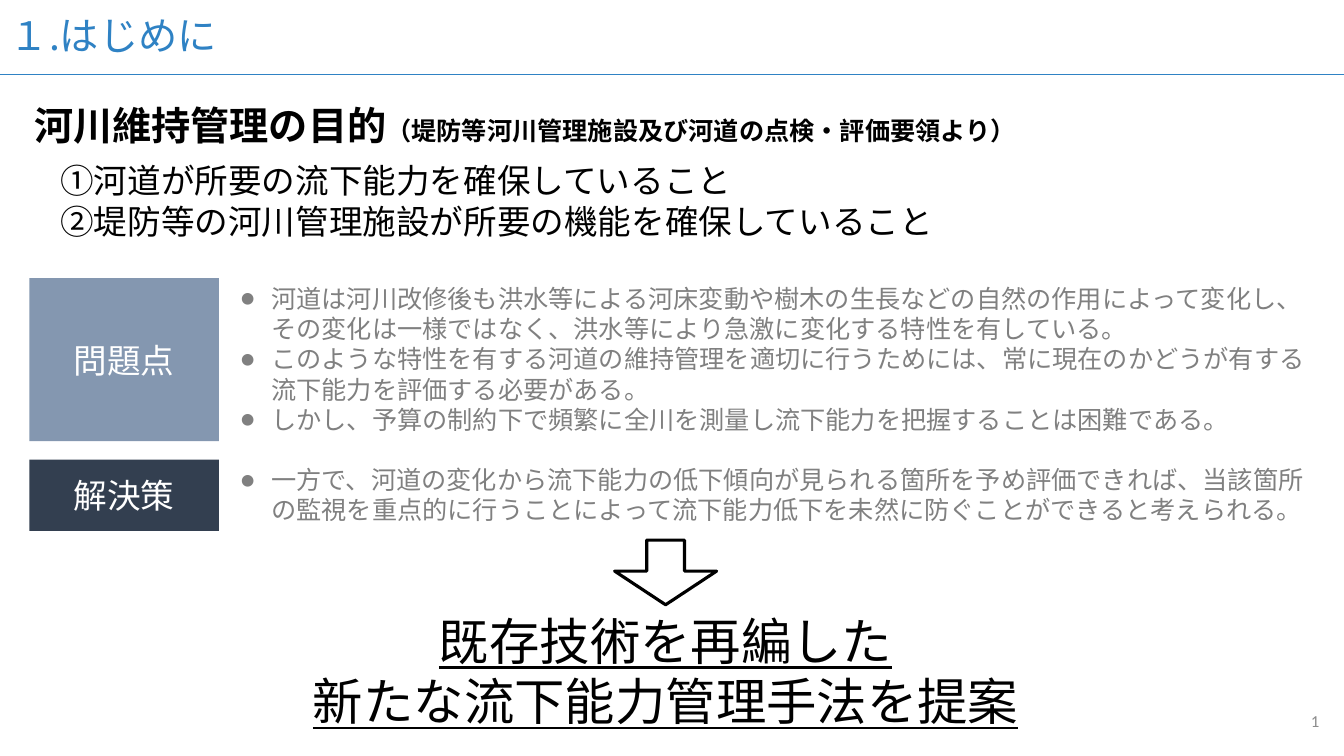
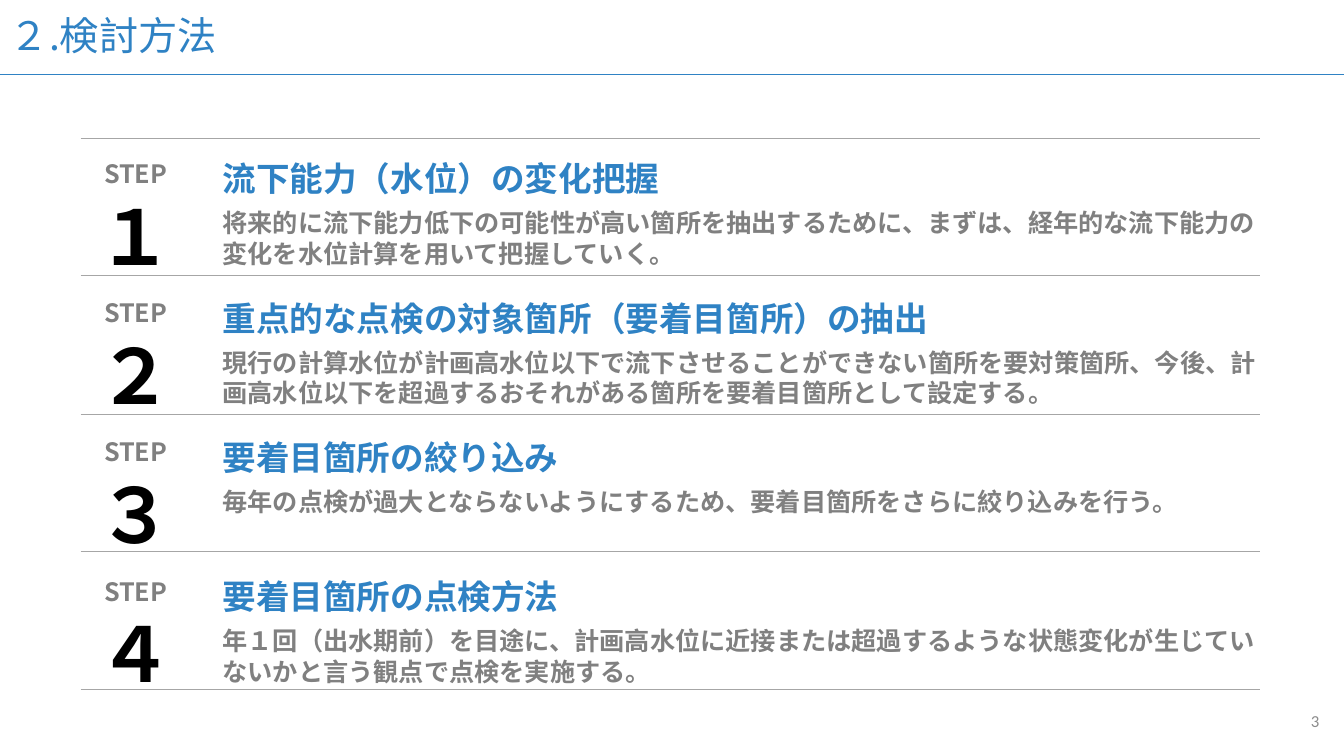
from math import ceil

from lxml.etree import SubElement
from pptx import Presentation
from pptx.dml.color import RGBColor
from pptx.enum.shapes import MSO_CONNECTOR as Connector, MSO_SHAPE as Shape
from pptx.enum.text import MSO_ANCHOR as Anchor, MSO_AUTO_SIZE as AutoSize, PP_ALIGN as Align
from pptx.oxml.ns import qn
from pptx.util import Cm, Pt

COLOURS = {
    "accent": "2F82C4", "text": "000000", "body": "808080", "number": "8C8C8C",
    "rule": "A6A6A6", "problem": "8497B0", "solution": "333F50", "white": "FFFFFF",
}
JAPANESE, LATIN = "Noto Sans CJK JP", "Calibri"
SLIDE_W, SLIDE_H = 33.87, 19.05

# Text styles: font attributes, with the colour given by its key
STYLES = {
    "title": {"size": Pt(28), "colour": "accent"},
    "number": {"size": Pt(12), "colour": "number", "name": LATIN},
    "heading": {"size": Pt(28), "colour": "text", "bold": True},
    "source": {"size": Pt(18), "colour": "text", "bold": True},
    "purpose": {"size": Pt(24), "colour": "text"},
    "body": {"size": Pt(18), "colour": "body"},
    "tag": {"size": Pt(24), "colour": "white"},
    "proposal": {"size": Pt(36), "colour": "text", "underline": True},
    "step": {"size": Pt(18), "colour": "body", "bold": True},
    "digit": {"size": Pt(54), "colour": "text", "bold": True},
    "step title": {"size": Pt(24), "colour": "accent", "bold": True},
}

PURPOSE_HEADING = [
    ("河川維持管理の目的", "heading"),
    ("（堤防等河川管理施設及び河道の点検・評価要領より）", "source"),
]
PURPOSES = [
    "①河道が所要の流下能力を確保していること",
    "②堤防等の河川管理施設が所要の機能を確保していること",
]
PROBLEMS = [
    "河道は河川改修後も洪水等による河床変動や樹木の生長などの自然の作用によって変化し、"
    "その変化は一様ではなく、洪水等により急激に変化する特性を有している。",
    "このような特性を有する河道の維持管理を適切に行うためには、"
    "常に現在のかどうが有する流下能力を評価する必要がある。",
    "しかし、予算の制約下で頻繁に全川を測量し流下能力を把握することは困難である。",
]
SOLUTIONS = [
    "一方で、河道の変化から流下能力の低下傾向が見られる箇所を予め評価できれば、"
    "当該箇所の監視を重点的に行うことによって流下能力低下を未然に防ぐことができると考えられる。",
]
PROPOSAL = ["既存技術を再編した", "新たな流下能力管理手法を提案"]
STEPS = [
    ("１", "流下能力（水位）の変化把握",
     "将来的に流下能力低下の可能性が高い箇所を抽出するために、まずは、"
     "経年的な流下能力の変化を水位計算を用いて把握していく。"),
    ("２", "重点的な点検の対象箇所（要着目箇所）の抽出",
     "現行の計算水位が計画高水位以下で流下させることができない箇所を要対策箇所、今後、"
     "計画高水位以下を超過するおそれがある箇所を要着目箇所として設定する。"),
    ("３", "要着目箇所の絞り込み",
     "毎年の点検が過大とならないようにするため、要着目箇所をさらに絞り込みを行う。"),
    ("４", "要着目箇所の点検方法",
     "年１回（出水期前）を目途に、計画高水位に近接または超過するような"
     "状態変化が生じていないかと言う観点で点検を実施する。"),
]
CHARS_PER_LINE = 41


def rgb(key):
    return RGBColor.from_string(COLOURS[key])


def cm_box(box):
    return [Cm(round(length, 2)) for length in box]


def add_bullet(paragraph):
    props = paragraph._p.get_or_add_pPr()
    props.set("marL", str(Cm(0.79)))
    props.set("indent", str(-Cm(0.79)))
    SubElement(props, qn("a:buFont")).set("typeface", LATIN)
    SubElement(props, qn("a:buChar")).set("char", "●")


def add_run(paragraph, words, style):
    run = paragraph.add_run()
    run.text = words
    for attribute, value in ({"name": JAPANESE} | STYLES[style]).items():
        if attribute == "colour":
            run.font.color.rgb = rgb(value)
        else:
            setattr(run.font, attribute, value)
    SubElement(run._r.get_or_add_rPr(), qn("a:ea")).set("typeface", run.font.name)


def write(frame, paragraphs, style, align=Align.LEFT, bullets=False, **frame_format):
    """Fill a frame; a paragraph is a string or a list of (words, style)."""
    for attribute, value in ({"word_wrap": True} | frame_format).items():
        setattr(frame, attribute, value)
    for index, content in enumerate(paragraphs):
        paragraph = frame.add_paragraph() if index else frame.paragraphs[0]
        paragraph.alignment = align
        if bullets:
            add_bullet(paragraph)
        runs = [(content, style)] if isinstance(content, str) else content
        for words, run_style in runs:
            add_run(paragraph, words, run_style)


def add_text(shapes, box, paragraphs, style, **options):
    frame = shapes.add_textbox(*cm_box(box)).text_frame
    write(frame, paragraphs, style, **({"auto_size": AutoSize.SHAPE_TO_FIT_TEXT} | options))
    return frame


def add_rule(slide, left, top, width, colour):
    start_x, y, length = cm_box((left, top, width))
    rule = slide.shapes.add_connector(Connector.STRAIGHT, start_x, y, start_x + length, y)
    rule.line.color.rgb = rgb(colour)
    rule.line.width = Pt(0.5)
    SubElement(rule._element.spPr, qn("a:effectLst"))


def add_page(deck, title, number):
    """Blank slide with the shared title, title rule and page number."""
    slide = deck.slides.add_slide(deck.slide_layouts[6])
    add_rule(slide, 0, 1.88, SLIDE_W, "accent")
    fixed = {"auto_size": AutoSize.NONE, "vertical_anchor": Anchor.MIDDLE}
    heading = add_text(slide.shapes, (0, -0.02, SLIDE_W, 1.92), [title], "title", **fixed)
    heading.paragraphs[0].line_spacing = 0.9
    add_text(slide.shapes, (25.88, 17.65, 7.62, 1.02), [number], "number",
             align=Align.RIGHT, **fixed)
    return slide


def add_purpose(slide, left, top):
    add_text(slide.shapes, (left, top, 25.98, 1.45), [PURPOSE_HEADING], "heading")
    add_text(slide.shapes, (left + 0.66, top + 1.47, 24.1, 2.31), PURPOSES, "purpose")


def add_topic(slide, box, tag, colour, points):
    """Coloured tag on the left, bulleted points on the right."""
    left, top, width, height = box
    tag_width, gap = 4.78, 0.28
    label = slide.shapes.add_shape(Shape.RECTANGLE, *cm_box((left, top, tag_width, height)))
    label.shadow.inherit = False
    label.fill.solid()
    label.fill.fore_color.rgb = rgb(colour)
    label.line.fill.background()
    write(label.text_frame, [tag], "tag", align=Align.CENTER, vertical_anchor=Anchor.MIDDLE)
    offset = tag_width + gap
    add_text(slide.shapes, (left + offset, top, width - offset, height), points, "body",
             bullets=True)


def add_proposal(slide, box):
    """Arrow leading down to the underlined proposal."""
    left, top, width, height = box
    arrow_width, arrow_height = 2.57, 1.63
    arrow_left = left + (width - arrow_width) / 2
    arrow = slide.shapes.add_shape(
        Shape.DOWN_ARROW, *cm_box((arrow_left, top, arrow_width, arrow_height)))
    arrow.shadow.inherit = False
    arrow.adjustments[0], arrow.adjustments[1] = 0.37, 0.52
    arrow.fill.background()
    arrow.line.color.rgb = rgb("text")
    arrow.line.width = Pt(2.25)
    add_text(slide.shapes, (left, top + arrow_height, width, height - arrow_height),
             PROPOSAL, "proposal", align=Align.CENTER)


def add_step(slide, left, top, digit, title, detail):
    # Step number
    marker = slide.shapes.add_group_shape().shapes
    add_text(marker, (left, top, 2.72, 1.02), ["STEP"], "step", align=Align.CENTER)
    add_text(marker, (left, top + 0.79, 2.72, 2.57), [digit], "digit", align=Align.CENTER)
    # Title and detail
    content = slide.shapes.add_group_shape().shapes
    detail_height = 0.24 + 0.78 * ceil(len(detail) / CHARS_PER_LINE)
    add_text(content, (left + 3.3, top, 23.24, 1.27), [title], "step title")
    add_text(content, (left + 3.3, top + 1.25, 26.59, detail_height), [detail], "step")


def add_steps(slide, box):
    """Equal rows parted by rules, one step in each."""
    left, top, width, height = box
    row = height / len(STEPS)
    for index in range(len(STEPS) + 1):
        add_rule(slide, left, top + index * row, width, "rule")
    for index, step in enumerate(STEPS):
        add_step(slide, left + 0.03, top + 0.38 + index * 3.51, *step)


def introduction(deck):
    slide = add_page(deck, "１.はじめに", "1")
    add_purpose(slide, 0.61, 2.44)
    add_topic(slide, (0.74, 7.01, 32.77, 4.11), "問題点", "problem", PROBLEMS)
    add_topic(slide, (0.74, 11.58, 32.77, 1.8), "解決策", "solution", SOLUTIONS)
    add_proposal(slide, (1.85, 13.61, 29.85, 4.96))


def method(deck):
    slide = add_page(deck, "２.検討方法", "3")
    add_steps(slide, (2.03, 3.48, 29.72, 13.89))


def main():
    deck = Presentation()
    deck.slide_width, deck.slide_height = Cm(SLIDE_W), Cm(SLIDE_H)
    introduction(deck)
    method(deck)
    deck.save("out.pptx")


if __name__ == "__main__":
    main()
